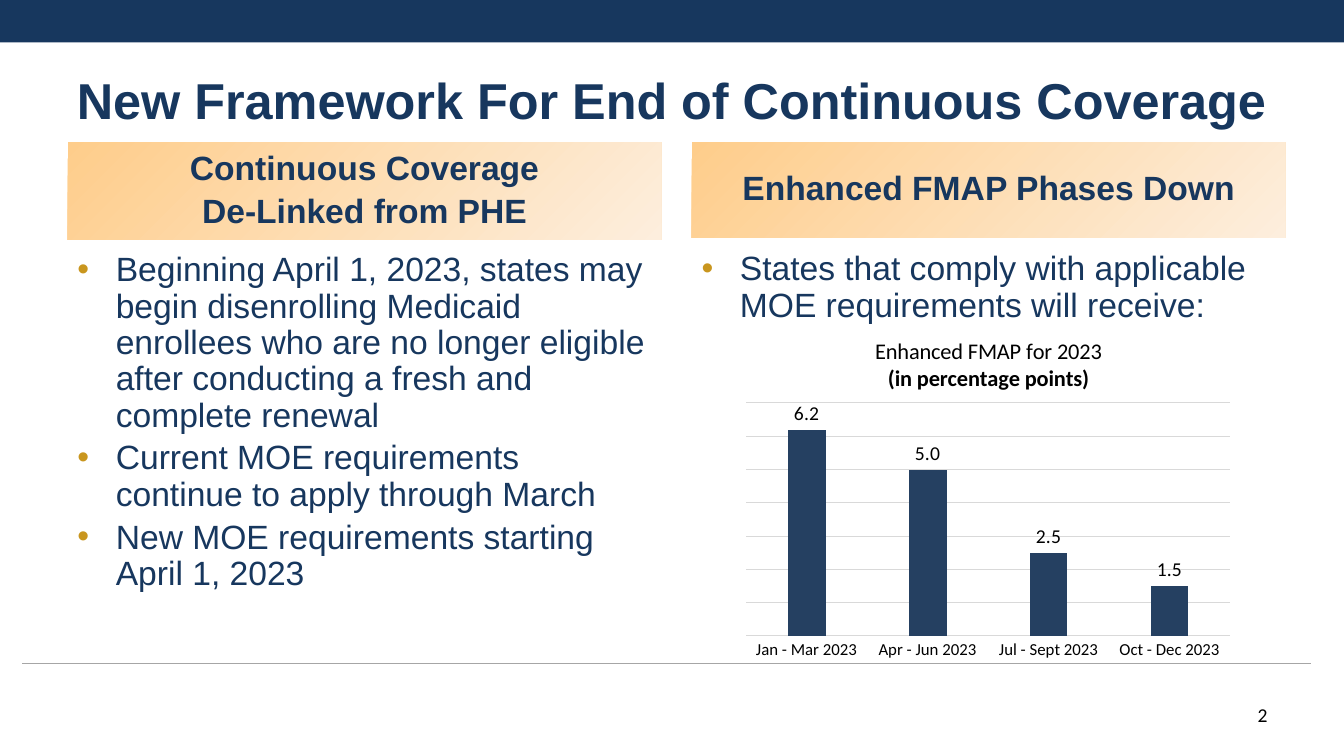
from lxml import etree
from pptx import Presentation
from pptx.chart.data import CategoryChartData
from pptx.dml.color import RGBColor
from pptx.enum.chart import XL_CHART_TYPE, XL_LABEL_POSITION, XL_TICK_MARK
from pptx.enum.shapes import MSO_CONNECTOR, MSO_SHAPE
from pptx.enum.text import MSO_ANCHOR, PP_ALIGN
from pptx.oxml import parse_xml
from pptx.oxml.ns import nsdecls, qn
from pptx.util import Inches, Pt

NAVY = RGBColor(0x17, 0x37, 0x5E)
BAR_BLUE = RGBColor(0x25, 0x40, 0x61)
ORANGE = RGBColor(0xFE, 0xCD, 0x8B)
CREAM = RGBColor(0xFD, 0xEE, 0xDD)
GOLD = RGBColor(0xC9, 0x96, 0x1E)
RULE_GRAY = RGBColor(0xA6, 0xA6, 0xA6)
GRID_GRAY = RGBColor(0xD9, 0xD9, 0xD9)
BLACK = RGBColor(0, 0, 0)


def write_paragraphs(text_frame, lines, size, color, font="Arial", bold=False,
                     align=PP_ALIGN.LEFT, spacing=None, bulleted=False):
    text_frame.word_wrap = True
    text_frame.text = "\n".join(lines)
    for index, paragraph in enumerate(text_frame.paragraphs):
        paragraph.alignment = align
        if spacing:
            paragraph.line_spacing = spacing
            paragraph.space_before = Pt(4.8 if index else 0)
        if bulleted:
            properties = paragraph._p.get_or_add_pPr()
            properties.set("marL", str(Inches(0.38)))
            properties.set("indent", str(-Inches(0.38)))
            properties.append(parse_xml(
                f'<a:buClr {nsdecls("a")}><a:srgbClr val="{GOLD}"/></a:buClr>'))
            properties.append(parse_xml(f'<a:buFont {nsdecls("a")} typeface="Arial"/>'))
            properties.append(parse_xml(f'<a:buChar {nsdecls("a")} char="•"/>'))
        for run in paragraph.runs:
            run.font.name = font
            run.font.size = Pt(size)
            run.font.bold = bold
            run.font.color.rgb = color


def place_in_chart(parent, index, **values):
    for old_layout in parent.findall(qn("c:layout")):
        parent.remove(old_layout)
    layout = parse_xml(f'<c:layout {nsdecls("c")}><c:manualLayout/></c:layout>')
    for name, value in values.items():
        etree.SubElement(layout[0], qn(f"c:{name}")).set("val", str(value))
    parent.insert(index, layout)


presentation = Presentation()
presentation.slide_width = Inches(13.33)
presentation.slide_height = Inches(7.5)
slide = presentation.slides.add_slide(presentation.slide_layouts[6])
shapes = slide.shapes

top_band = shapes.add_shape(MSO_SHAPE.RECTANGLE, 0, 0, Inches(13.33), Inches(0.42))
top_band.shadow.inherit = False
top_band.fill.solid()
top_band.fill.fore_color.rgb = NAVY
top_band.line.fill.background()

footer_rule = shapes.add_connector(
    MSO_CONNECTOR.STRAIGHT, Inches(0.22), Inches(6.58), Inches(13), Inches(6.58))
footer_rule.line.color.rgb = RULE_GRAY
footer_rule.line.width = Pt(0.75)
etree.SubElement(footer_rule._element.spPr, qn("a:effectLst"))

title = shapes.add_textbox(0, Inches(0.42), Inches(13.33), Inches(1.13))
title.text_frame.vertical_anchor = MSO_ANCHOR.MIDDLE
write_paragraphs(title.text_frame, ["New Framework For End of Continuous Coverage"],
                 36, NAVY, bold=True, align=PP_ALIGN.CENTER)

columns = [
    (0.67, 0.97, ["Continuous Coverage", "De-Linked from PHE"], 2.46, 4.37, [
        "Beginning April 1, 2023, states may begin disenrolling Medicaid enrollees "
        "who are no longer eligible after conducting a fresh and complete renewal",
        "Current MOE requirements continue to apply through March",
        "New MOE requirements starting April 1, 2023",
    ]),
    (6.86, 0.95, ["Enhanced FMAP Phases Down"], 2.45, 0.97, [
        "States that comply with applicable MOE requirements will receive:",
    ]),
]
for left, header_height, heading, body_top, body_height, bullets in columns:
    header = shapes.add_shape(MSO_SHAPE.RECTANGLE, Inches(left), Inches(1.41),
                              Inches(5.89), Inches(header_height))
    header.shadow.inherit = False
    header.line.fill.background()
    header.fill.gradient()
    header.fill.gradient_angle = 315
    for stop, color in zip(header.fill.gradient_stops, (ORANGE, CREAM)):
        stop.color.rgb = color
    header.text_frame.vertical_anchor = MSO_ANCHOR.MIDDLE
    write_paragraphs(header.text_frame, heading, 24, NAVY, bold=True,
                     align=PP_ALIGN.CENTER, spacing=0.9)

    body = shapes.add_textbox(Inches(left), Inches(body_top),
                              Inches(5.89), Inches(body_height))
    write_paragraphs(body.text_frame, bullets, 24, NAVY, spacing=0.9, bulleted=True)

page_number = shapes.add_textbox(Inches(11.67), Inches(6.92), Inches(1), Inches(0.4))
page_number.text_frame.vertical_anchor = MSO_ANCHOR.TOP
write_paragraphs(page_number.text_frame, ["2"], 14, BLACK, "Calibri", align=PP_ALIGN.RIGHT)

chart_data = CategoryChartData(number_format="0.0")
chart_data.categories = ["Jan - Mar 2023", "Apr - Jun 2023", "Jul - Sept 2023", "Oct - Dec 2023"]
chart_data.add_series("Series 1", [6.2, 5, 2.5, 1.5])
chart = shapes.add_chart(XL_CHART_TYPE.COLUMN_CLUSTERED, Inches(7.3), Inches(3.17),
                         Inches(5), Inches(3.45), chart_data).chart
chart.has_legend = False
chart.font.name = "Calibri"
chart.font.size = Pt(10)
chart.font.color.rgb = BLACK

chart_title = chart.chart_title
write_paragraphs(chart_title.text_frame, ["Enhanced FMAP for 2023", "(in percentage points)"],
                 16, BLACK, "Calibri", align=PP_ALIGN.CENTER)
chart_title.text_frame.paragraphs[1].runs[0].font.bold = True
place_in_chart(chart_title._element, 1, xMode="edge", yMode="edge", x=0.27, y=0.04)
place_in_chart(chart._chartSpace.chart.plotArea, 0, layoutTarget="inner",
               xMode="edge", yMode="edge", x=0.02, y=0.24, w=0.96, h=0.67)

category_axis = chart.category_axis
category_axis.major_tick_mark = XL_TICK_MARK.NONE
category_axis.format.line.color.rgb = GRID_GRAY
category_axis.format.line.width = Pt(0.75)
category_axis.tick_labels.font.name = "Calibri"
category_axis.tick_labels.font.size = Pt(12)
category_axis.tick_labels.font.color.rgb = BLACK

value_axis = chart.value_axis
value_axis.minimum_scale = 0
value_axis.maximum_scale = 7
value_axis.major_unit = 1
value_axis.major_gridlines.format.line.color.rgb = GRID_GRAY
value_axis.major_gridlines.format.line.width = Pt(0.75)
value_axis.visible = False

plot = chart.plots[0]
plot.vary_by_categories = False
plot.gap_width = 219
plot.overlap = -27
series = plot.series[0]
series.format.fill.solid()
series.format.fill.fore_color.rgb = BAR_BLUE
labels = series.data_labels
labels.show_value = True
labels.position = XL_LABEL_POSITION.OUTSIDE_END
labels.number_format = "0.0"
labels.number_format_is_linked = False
labels.font.name = "Calibri"
labels.font.size = Pt(14)
labels.font.color.rgb = BLACK

presentation.save("out.pptx")
